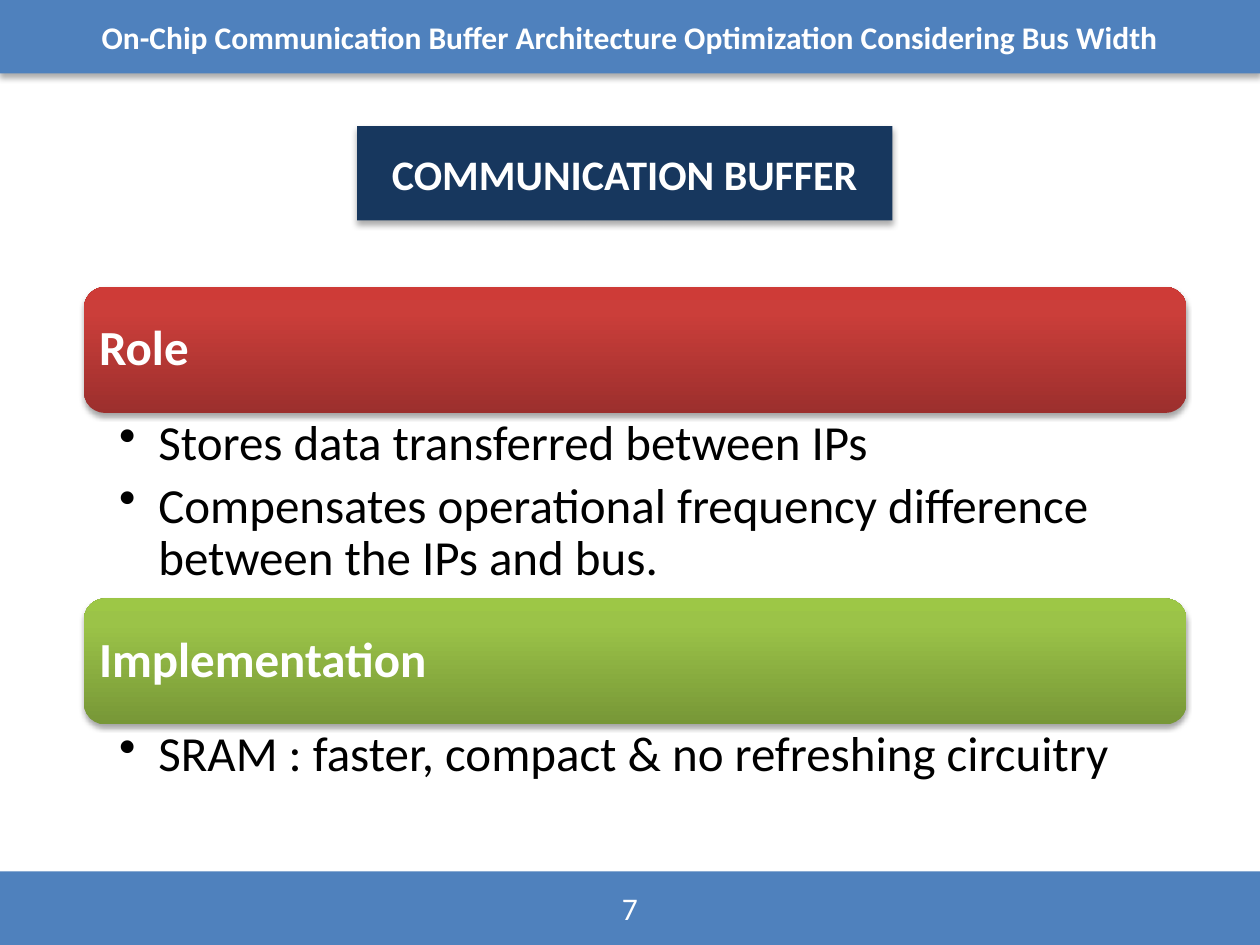
from copy import deepcopy

from lxml import etree
from pptx import Presentation
from pptx.dml.color import RGBColor
from pptx.enum.shapes import MSO_SHAPE
from pptx.enum.text import MSO_ANCHOR, MSO_AUTO_SIZE, PP_ALIGN
from pptx.oxml.ns import qn
from pptx.util import Pt

RECTANGLE = MSO_SHAPE.RECTANGLE
ROUNDED = MSO_SHAPE.ROUNDED_RECTANGLE
MIDDLE, TOP = MSO_ANCHOR.MIDDLE, MSO_ANCHOR.TOP
CENTER, LEFT = PP_ALIGN.CENTER, PP_ALIGN.LEFT
NO_AUTOFIT = MSO_AUTO_SIZE.NONE

FONT = "Calibri"
WHITE = RGBColor(0xFF, 0xFF, 0xFF)
BLACK = RGBColor(0x00, 0x00, 0x00)
BLUE = RGBColor(0x4F, 0x81, 0xBD)
NAVY = RGBColor(0x17, 0x37, 0x5E)
# Gradient colours run from the bottom of a heading to its top
REDS = (RGBColor(0x9C, 0x2F, 0x2D), RGBColor(0xCB, 0x3E, 0x3A), RGBColor(0xCE, 0x3B, 0x37))
GREENS = (RGBColor(0x77, 0x97, 0x37), RGBColor(0x9B, 0xC3, 0x48), RGBColor(0x9D, 0xC7, 0x46))
GRADIENT_POSITIONS = (0, 0.8, 1)

SLIDE_WIDTH, SLIDE_HEIGHT = 720, 540
BAR_HEIGHT = 42
HEADING_HEIGHT = 72


def place(shape, box):
    shape.left, shape.top, shape.width, shape.height = (Pt(length) for length in box)


def add_shadow(shape, opacity, blur, distance):
    shape.shadow.inherit = False
    effects = shape._element.spPr.find(qn("a:effectLst"))
    shadow = etree.SubElement(
        effects, qn("a:outerShdw"), blurRad=str(Pt(blur)), dist=str(Pt(distance)),
        dir="5400000", algn="ctr", rotWithShape="0")
    color = etree.SubElement(shadow, qn("a:srgbClr"), val="000000")
    etree.SubElement(color, qn("a:alpha"), val=str(opacity * 1000))


def write(shape, text, size, color, bold=False, align=LEFT, anchor=MIDDLE):
    frame = shape.text_frame
    frame.text = text
    frame.word_wrap = True
    frame.auto_size = NO_AUTOFIT
    frame.vertical_anchor = anchor
    for paragraph in frame.paragraphs:
        paragraph.alignment = align
        for run in paragraph.runs:
            run.font.name = FONT
            run.font.size = Pt(size)
            run.font.bold = bold
            run.font.color.rgb = color
    return frame


def style_banner(shape, color, text, size, bold):
    shape.fill.solid()
    shape.fill.fore_color.rgb = color
    shape.line.fill.background()
    add_shadow(shape, 32, 3.5, 2.2)
    write(shape, text, size, WHITE, bold, CENTER)


def add_bar(slide, box, text, bold):
    bar = slide.shapes.add_shape(RECTANGLE, *(Pt(length) for length in box))
    style_banner(bar, BLUE, text, 18, bold)


def format_title(slide, box, text):
    title = slide.shapes.title
    place(title, box)
    style_banner(title, NAVY, text, 24, True)


def fill_gradient(shape, colors):
    shape.fill.gradient()
    shape.fill.gradient_angle = 90
    stop_list = shape._element.spPr.find(".//" + qn("a:gsLst"))
    stop_list.append(deepcopy(stop_list[-1]))
    for stop, position, color in zip(shape.fill.gradient_stops, GRADIENT_POSITIONS, colors):
        stop.position = position
        stop.color.rgb = color


def add_bullet(paragraph):
    properties = paragraph._p.get_or_add_pPr()
    properties.set("marL", str(Pt(22.5)))
    properties.set("indent", str(-Pt(22.5)))
    etree.SubElement(properties, qn("a:buChar"), char="•")


def add_section(slide, box, heading_text, colors, points):
    left, top, width, height = box

    # Heading
    heading = slide.shapes.add_shape(ROUNDED, Pt(left), Pt(top), Pt(width), Pt(HEADING_HEIGHT))
    fill_gradient(heading, colors)
    heading.line.fill.background()
    add_shadow(heading, 35, 3.1, 1.8)
    frame = write(heading, heading_text, 28, WHITE, bold=True)
    frame.margin_left = frame.margin_right = Pt(5.1)
    frame.paragraphs[0].line_spacing = 0.9

    # Bulleted points
    body = slide.shapes.add_textbox(
        Pt(left), Pt(top + HEADING_HEIGHT), Pt(width), Pt(height - HEADING_HEIGHT))
    frame = write(body, "\n".join(points), 28, BLACK, anchor=TOP)
    frame.margin_left, frame.margin_right = Pt(20), Pt(16)
    frame.margin_top = frame.margin_bottom = Pt(2.8)
    for paragraph in frame.paragraphs:
        paragraph.line_spacing = 0.9
        paragraph.space_after = Pt(5.6)
        add_bullet(paragraph)


def main():
    presentation = Presentation()
    presentation.slide_width, presentation.slide_height = Pt(SLIDE_WIDTH), Pt(SLIDE_HEIGHT)
    slide = presentation.slides.add_slide(presentation.slide_layouts.get_by_name("Title Only"))

    # Footer and header bars
    add_bar(slide, (0, SLIDE_HEIGHT - BAR_HEIGHT, SLIDE_WIDTH, BAR_HEIGHT), "7", False)
    add_bar(slide, (0, 0, SLIDE_WIDTH, BAR_HEIGHT),
            "On-Chip Communication Buffer Architecture Optimization Considering Bus Width", True)

    format_title(slide, (204, 72, 306, 54), "COMMUNICATION BUFFER")

    # Sections
    add_section(slide, (48, 164, 630, 178), "Role", REDS, [
        "Stores data transferred between IPs",
        "Compensates operational frequency difference between the IPs and bus.",
    ])
    add_section(slide, (48, 342, 630, 136), "Implementation", GREENS, [
        "SRAM : faster, compact & no refreshing circuitry",
    ])

    presentation.save("out.pptx")


if __name__ == "__main__":
    main()
